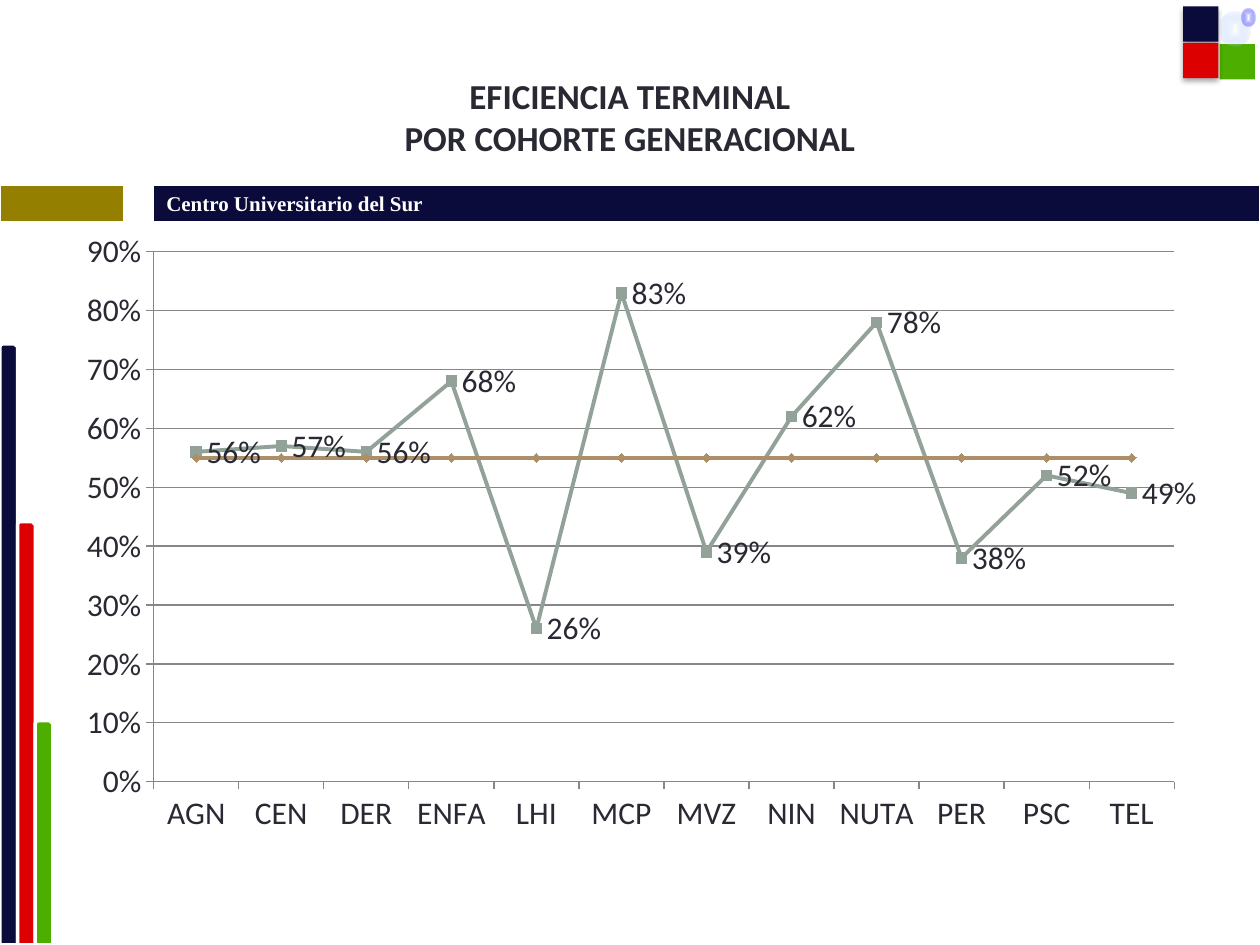
import pptx
import pptx.chart.data
import pptx.dml.color
import pptx.enum.chart
import pptx.enum.shapes
import pptx.enum.text
import pptx.oxml
import pptx.oxml.ns
import pptx.util

Inches = pptx.util.Inches
Pt = pptx.util.Pt
RGB = pptx.dml.color.RGBColor.from_string
Shape = pptx.enum.shapes.MSO_SHAPE
Marker = pptx.enum.chart.XL_MARKER_STYLE

THEME = {
    "navy": "0A0B3A", "red": "DC0000", "green": "4DAE00", "gold": "947F00",
    "white": "FFFFFF", "ink": "292934", "grid": "878787",
    "sage": "93A299", "tan": "AD8F67", "sky": "A8C1FA", "blue": "0000FF",
    "body_font": "Calibri", "band_font": "Times New Roman",
    "title_size": 20, "band_size": 12, "chart_size": 18,
}
NAMESPACE = pptx.oxml.ns.nsdecls("a")


def style_font(font, size, face, color, bold=False):
    values = {"size": Pt(THEME[size]), "name": THEME[face], "bold": bold}
    for name, value in values.items():
        setattr(font, name, value)
    font.color.rgb = RGB(THEME[color])


def add_figure(kind, left, top, width, height, color):
    figure = page.shapes.add_shape(kind, Inches(left), Inches(top), Inches(width), Inches(height))
    figure.shadow.inherit = False
    figure.fill.solid()
    figure.fill.fore_color.rgb = RGB(THEME[color])
    figure.line.fill.background()
    return figure


deck = pptx.Presentation()
deck.slide_width = Inches(10)
deck.slide_height = Inches(7.5)
page = deck.slides.add_slide(deck.slide_layouts[6])

band = page.shapes.add_table(1, 3, Inches(0), Inches(1.47), Inches(10), Inches(0.3)).table
band.first_row = False
band.horz_banding = False
cells = [(0.98, "gold", ""), (0.24, None, ""), (8.78, "navy", "Centro Universitario del Sur")]
for index, (width, color, text) in enumerate(cells):
    band.columns[index].width = Inches(width)
    cell = band.cell(0, index)
    cell.vertical_anchor = pptx.enum.text.MSO_ANCHOR.MIDDLE
    properties = cell._tc.get_or_add_tcPr()
    for side, weight in (("L", 1), ("R", 1), ("T", 1), ("B", 3)):
        properties.append(pptx.oxml.parse_xml(
            f'<a:ln{side} {NAMESPACE} w="{Pt(weight)}"><a:solidFill>'
            f'<a:srgbClr val="{THEME["white"]}"/></a:solidFill></a:ln{side}>'))
    if color:
        cell.fill.solid()
        cell.fill.fore_color.rgb = RGB(THEME[color])
    else:
        cell.fill.background()
    para = cell.text_frame.paragraphs[0]
    style_font(para.font, "band_size", "band_font", "white", True)
    if text:
        span = para.add_run()
        span.text = text
        style_font(span.font, "band_size", "band_font", "white", True)

for index, (top, color) in enumerate([(2.73, "navy"), (4.14, "red"), (5.72, "green")]):
    bar = add_figure(Shape.SNIP_ROUND_RECTANGLE, index * 0.14, top, 0.14, 7.5 - top, color)
    bar.line.color.rgb = RGB(THEME["white"])
    bar.line.width = Pt(2)

squares = [(9.68, 0.35, "green", False), (9.39, 0.05, "navy", True), (9.39, 0.34, "red", True)]
for left, top, color, shaded in squares:
    square = add_figure(Shape.RECTANGLE, left, top, 0.28, 0.28, color)
    if shaded:
        square._element.spPr.find(pptx.oxml.ns.qn("a:effectLst")).append(pptx.oxml.parse_xml(
            f'<a:outerShdw {NAMESPACE} blurRad="{Pt(3.1)}" dist="{Pt(1.8)}" dir="5400000" '
            'rotWithShape="0"><a:srgbClr val="000000"><a:alpha val="35000"/>'
            '</a:srgbClr></a:outerShdw>'))

for left, top, width, height, color, alpha in [
    (9.68, 0.09, 0.24, 0.28, "sky", 10),
    (9.85, 0.07, 0.11, 0.14, "blue", 20),
]:
    glow = add_figure(Shape.OVAL, left, top, width, height, color)
    solid = glow._element.spPr.find(pptx.oxml.ns.qn("a:solidFill"))
    solid.getparent().replace(solid, pptx.oxml.parse_xml(
        f'<a:gradFill {NAMESPACE} rotWithShape="1"><a:gsLst>'
        f'<a:gs pos="0"><a:srgbClr val="{THEME["white"]}"/></a:gs>'
        f'<a:gs pos="100000"><a:srgbClr val="{THEME[color]}"><a:alpha val="{alpha * 1000}"/>'
        '</a:srgbClr></a:gs></a:gsLst><a:path path="shape">'
        '<a:fillToRect l="50000" t="50000" r="50000" b="50000"/></a:path></a:gradFill>'))

title = page.shapes.add_textbox(Inches(0.5), Inches(0.3), Inches(9), Inches(1.25))
frame = title.text_frame
frame.word_wrap = True
frame.vertical_anchor = pptx.enum.text.MSO_ANCHOR.MIDDLE
para = frame.paragraphs[0]
para.text = "EFICIENCIA TERMINAL\vPOR COHORTE GENERACIONAL"
para.alignment = pptx.enum.text.PP_ALIGN.CENTER
for span in para.runs:
    style_font(span.font, "title_size", "body_font", "ink", True)

rates = pptx.chart.data.CategoryChartData(number_format="0%")
rates.categories = ["AGN", "CEN", "DER", "ENFA", "LHI", "MCP",
                    "MVZ", "NIN", "NUTA", "PER", "PSC", "TEL"]
rates.add_series("Series 1", [0.56, 0.57, 0.56, 0.68, 0.26, 0.83,
                              0.39, 0.62, 0.78, 0.38, 0.52, 0.49])
rates.add_series("Series 2", [0.55] * 12)
chart = page.shapes.add_chart(
    pptx.enum.chart.XL_CHART_TYPE.LINE_MARKERS,
    Inches(0.5), Inches(1.75), Inches(9), Inches(4.95), rates).chart
chart.has_legend = False
chart.has_title = False
style_font(chart.font, "chart_size", "body_font", "ink")

value_axis = chart.value_axis
scale = {"minimum_scale": 0, "maximum_scale": 0.9, "major_unit": 0.1, "has_major_gridlines": True}
for name, value in scale.items():
    setattr(value_axis, name, value)
value_axis.tick_labels.number_format = "0%"
value_axis.tick_labels.number_format_is_linked = False
for rule in (value_axis.format, chart.category_axis.format, value_axis.major_gridlines.format):
    rule.line.color.rgb = RGB(THEME["grid"])
    rule.line.width = Pt(0.75)
for axis in (value_axis, chart.category_axis):
    axis.major_tick_mark = pptx.enum.chart.XL_TICK_MARK.OUTSIDE

plot = chart.plots[0]
plot.vary_by_categories = False
looks = [("sage", Marker.SQUARE, 6), ("tan", Marker.DIAMOND, 5)]
for series, (color, marker, size) in zip(plot.series, looks):
    series.smooth = False
    series.format.line.width = Pt(2.25)
    series.marker.style = marker
    series.marker.size = size
    series.marker.format.fill.solid()
    for paint in (series.format.line.color, series.marker.format.fill.fore_color,
                  series.marker.format.line.color):
        paint.rgb = RGB(THEME[color])

labels = plot.series[0].data_labels
label_values = {
    "show_value": True, "number_format": "0%", "number_format_is_linked": False,
    "position": pptx.enum.chart.XL_LABEL_POSITION.RIGHT,
}
for name, value in label_values.items():
    setattr(labels, name, value)
style_font(labels.font, "chart_size", "body_font", "ink")

area = chart._chartSpace.chart.plotArea
for layout in area.findall(pptx.oxml.ns.qn("c:layout")):
    area.remove(layout)
places = "".join(f'<c:{name} val="{value}"/>' for name, value in
                 [("x", 0.08), ("y", 0.05), ("w", 0.9), ("h", 0.85)])
area.insert(0, pptx.oxml.parse_xml(
    f'<c:layout {pptx.oxml.ns.nsdecls("c")}><c:manualLayout><c:layoutTarget val="inner"/>'
    f'<c:xMode val="edge"/><c:yMode val="edge"/>{places}</c:manualLayout></c:layout>'))

deck.save("out.pptx")
